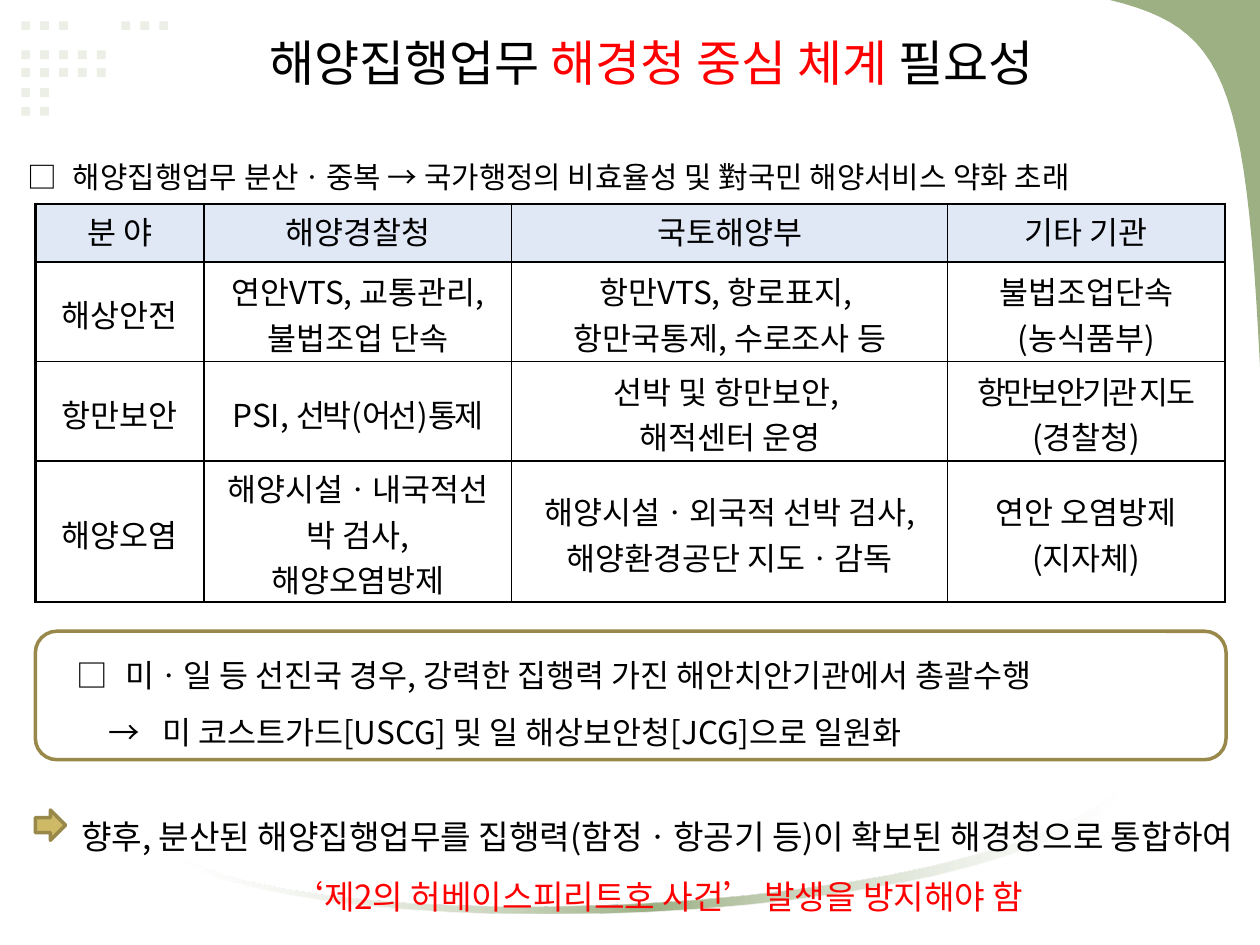
from collections import namedtuple
from dataclasses import dataclass

from lxml import etree
from pptx import Presentation
from pptx.dml.color import RGBColor
from pptx.enum.shapes import MSO_SHAPE
from pptx.enum.text import MSO_ANCHOR, MSO_AUTO_SIZE, PP_ALIGN
from pptx.oxml import parse_xml
from pptx.oxml.ns import nsdecls, qn
from pptx.util import Pt

RECT = MSO_SHAPE.RECTANGLE
ROUND = MSO_SHAPE.ROUNDED_RECTANGLE
ARROW = MSO_SHAPE.RIGHT_ARROW
GROW = MSO_AUTO_SIZE.SHAPE_TO_FIT_TEXT
MIDDLE, TOP = MSO_ANCHOR.MIDDLE, MSO_ANCHOR.TOP
LEFT, CENTER = PP_ALIGN.LEFT, PP_ALIGN.CENTER

Box = namedtuple("Box", "x y w h")
Run = namedtuple("Run", "text color spc", defaults=(None, 0))


@dataclass(frozen=True)
class Theme:
    """Colours, font and type sizes of the slide."""
    font: str = "Noto Sans CJK KR"
    ink: str = "000000"
    alert: str = "FF0000"
    head: str = "E0E7F5"
    dot: str = "EBEFE6"
    leaf: str = "9CB084"
    pale: str = "FFFFFF"
    gold: str = "CEB966"
    edge: str = "98894B"
    title: int = 28
    lead: int = 17
    body: int = 18
    close: int = 19


T = Theme()
HEADS = ["분 야", "해양경찰청", "국토해양부", "기타 기관"]
ROWS = [
    ["해상안전", "연안VTS, 교통관리, 불법조업 단속",
     "항만VTS, 항로표지, \n항만국통제, 수로조사 등", "불법조업단속\n(농식품부)"],
    ["항만보안", [Run("PSI, "), Run("선박(어선)통제", spc=-150)],
     "선박 및 항만보안, \n해적센터 운영",
     [Run("항만보안기관 지도", spc=-150), Run("(경찰청)")]],
    ["해양오염", "해양시설ㆍ내국적선박 검사,\n해양오염방제",
     "해양시설ㆍ외국적 선박 검사, 해양환경공단 지도ㆍ감독",
     "연안 오염방제\n(지자체)"],
]


def write(par, runs, size, align=LEFT, space=None, hang=None):
    """Fill a paragraph run by run; hang is (left margin, first indent)."""
    par.alignment = align
    if space:
        par.line_spacing = space
    if hang:
        props = par._p.get_or_add_pPr()
        props.set("marL", str(Pt(hang[0])))
        props.set("indent", str(Pt(hang[1])))
    for item in runs:
        run = par.add_run()
        run.text = item.text
        font = run.font
        font.name, font.size = T.font, Pt(size)
        font.color.rgb = RGBColor.from_string(item.color or T.ink)
        props = run._r.get_or_add_rPr()
        etree.SubElement(props, qn("a:ea")).set("typeface", T.font)
        if item.spc:
            props.set("spc", str(item.spc))


def text_box(slide, box, wrap=True):
    """Add an empty growing text box and return its frame."""
    frame = slide.shapes.add_textbox(*map(Pt, box)).text_frame
    frame.word_wrap, frame.auto_size = wrap, GROW
    return frame


def paint(shape, fill=None, line=None):
    """Set fill and line of a shape and drop its shadow."""
    shape.shadow.inherit = False
    if fill:
        shape.fill.solid()
        shape.fill.fore_color.rgb = RGBColor.from_string(fill)
    else:
        shape.fill.background()
    if line:
        shape.line.color.rgb = RGBColor.from_string(line)
        shape.line.width = Pt(2)
    else:
        shape.line.fill.background()


def curve(ends, steps=24):
    """Sample a cubic curve given by four points."""
    pts = []
    for i in range(steps + 1):
        t = i / steps
        mix = ((1 - t) ** 3, 3 * t * (1 - t) ** 2, 3 * t * t * (1 - t), t ** 3)
        pts.append(tuple(sum(m * p[k] for m, p in zip(mix, ends)) for k in (0, 1)))
    return pts


def outline(slide, box, pts):
    """Draw a closed leaf-coloured outline from points within a box."""
    pts = [(Pt(box.x + x), Pt(box.y + y)) for x, y in pts]
    form = slide.shapes.build_freeform(*pts[0], scale=1)
    form.add_line_segments(pts[1:], close=True)
    shape = form.convert_to_shape()
    paint(shape, T.leaf)
    return shape


def dots(slide, box):
    """Draw the grid of small squares."""
    step, side = 10.8, 5
    grid = {0: (0, 1, 2, 5.3, 6.3, 7.3), 16.6: range(5), 26.8: range(5),
            38.2: range(2), 49: range(2)}
    for y, cols in grid.items():
        for col in cols:
            spot = (box.x + col * step, box.y + y, side, side)
            paint(slide.shapes.add_shape(RECT, *map(Pt, spot)), T.dot)


def corner(slide, box):
    """Draw the curved corner at the top right."""
    arc = curve([(0, 0), (65, 16), (77.5, 44), (box.w, box.h)])
    outline(slide, box, arc + [(box.w, 0)])


def swoosh(slide, box):
    """Draw the thin arc that fades at both ends."""
    upper = curve([(box.w, 0), (452, 75.5), (81.5, 86.5), (0, 39)])
    lower = curve([(0, 41), (81.5, 89.5), (452, 83), (box.w, 5)])
    shape = outline(slide, box, upper + lower)
    stops = "".join(
        f'<a:gs pos="{pos}000"><a:srgbClr val="{hue}">'
        f'<a:alpha val="{alpha}000"/></a:srgbClr></a:gs>'
        for pos, hue, alpha in ((0, T.pale, 30), (50, T.leaf, 100), (100, T.pale, 30)))
    fade = parse_xml(f'<a:gradFill {nsdecls("a")}><a:gsLst>{stops}</a:gsLst>'
                     '<a:lin ang="0" scaled="0"/></a:gradFill>')
    props = shape._element.spPr
    props.replace(props.find(qn("a:solidFill")), fade)


def title(slide, box):
    """Write the title line."""
    runs = [Run("해양집행업무 "), Run("해경청 중심 체계 ", T.alert), Run("필요성")]
    write(text_box(slide, box, False).paragraphs[0], runs, T.title, CENTER)


def lead(slide, box):
    """Write the line above the table."""
    text = "□\t해양집행업무 분산ㆍ중복 → 국가행정의 비효율성 및 對국민 해양서비스 약화 초래"
    write(text_box(slide, box).paragraphs[0], [Run(text)], T.lead, space=1.5, hang=(26, -26))


def border(cell, widths):
    """Set left, right, top and bottom cell lines."""
    props = cell._tc.get_or_add_tcPr()
    for i, (side, width) in enumerate(zip("LRTB", widths)):
        props.insert(i, parse_xml(
            f'<a:ln{side} {nsdecls("a")} w="{Pt(width)}"><a:solidFill>'
            f'<a:srgbClr val="{T.ink}"/></a:solidFill></a:ln{side}>'))


def duties(slide, box):
    """Build the table of duties by agency."""
    data = [HEADS] + ROWS
    wide, tall = (96.5, 175.7, 249.1, 158.4), (33.1, 56.9, 56.9, 80.6)
    table = slide.shapes.add_table(len(tall), len(wide), *map(Pt, box)).table
    table.first_row = table.horz_banding = False
    for col, width in zip(table.columns, wide):
        col.width = Pt(width)
    for r, (row, height) in enumerate(zip(data, tall)):
        table.rows[r].height = Pt(height)
        for c, value in enumerate(row):
            cell = table.cell(r, c)
            cell.margin_top, cell.margin_bottom = Pt(2.4), 0
            cell.vertical_anchor = MIDDLE if r else TOP
            if r:
                cell.fill.background()
            else:
                cell.fill.solid()
                cell.fill.fore_color.rgb = RGBColor.from_string(T.head)
            outer = (c == 0, c == len(wide) - 1, r == 0, r == len(tall) - 1)
            border(cell, [1.5 if edge else 1 for edge in outer])
            lines = [[Run(s)] for s in value.split("\n")] if isinstance(value, str) else [value]
            for i, runs in enumerate(lines):
                frame = cell.text_frame
                par = frame.add_paragraph() if i else frame.paragraphs[0]
                write(par, runs, T.body, CENTER)


def cases(slide, box):
    """Draw the rounded frame with the foreign examples."""
    paint(slide.shapes.add_shape(ROUND, *map(Pt, box)), line=T.edge)
    frame = text_box(slide, Box(box.x + 16.5, box.y, box.w - 33.8, box.h))
    write(frame.paragraphs[0],
          [Run("□\t미ㆍ일 등 선진국 경우, 강력한 집행력 가진 해안치안기관에서 총괄수행")],
          T.body, space=1.5, hang=(28, -28))
    write(frame.add_paragraph(),
          [Run("→\t미 코스트가드[USCG] 및 일 해상보안청[JCG]으로 일원화")],
          T.body, space=1.5, hang=(49, -31))


def close(slide, box):
    """Write the conclusion and its arrow."""
    frame = text_box(slide, Box(box.x + 10.8, box.y, box.w - 10.8, box.h))
    runs = [Run("향후, 분산된 해양집행업무를 집행력(함정ㆍ항공기 등)이 확보된 해경청으로 통합하여 "),
            Run("‘제2의 허베이스피리트호 사건’ 발생을 방지해야 함", T.alert)]
    write(frame.paragraphs[0], runs, T.close, CENTER, 1.5)
    mark = (box.x, box.y + 11.5, 17.3, 17.3)
    paint(slide.shapes.add_shape(ARROW, *map(Pt, mark)), T.gold, T.edge)


def main():
    """Build the slide and save it."""
    deck = Presentation()
    deck.slide_width, deck.slide_height = Pt(720), Pt(540)
    slide = deck.slides.add_slide(deck.slide_layouts[6])
    dots(slide, Box(12.2, 12.2, 84, 54))
    corner(slide, Box(634.3, 0, 85.7, 209.5))
    swoosh(slide, Box(102.2, 450, 540, 72))
    title(slide, Box(120.2, 15.1, 504.7, 41))
    lead(slide, Box(8.6, 77, 680.4, 38.2))
    duties(slide, Box(20.2, 116.6, 680, 227))
    cases(slide, Box(20.2, 360.7, 680.4, 73.4))
    close(slide, Box(20.2, 451.4, 699.8, 71.3))
    deck.save("out.pptx")


if __name__ == "__main__":
    main()
